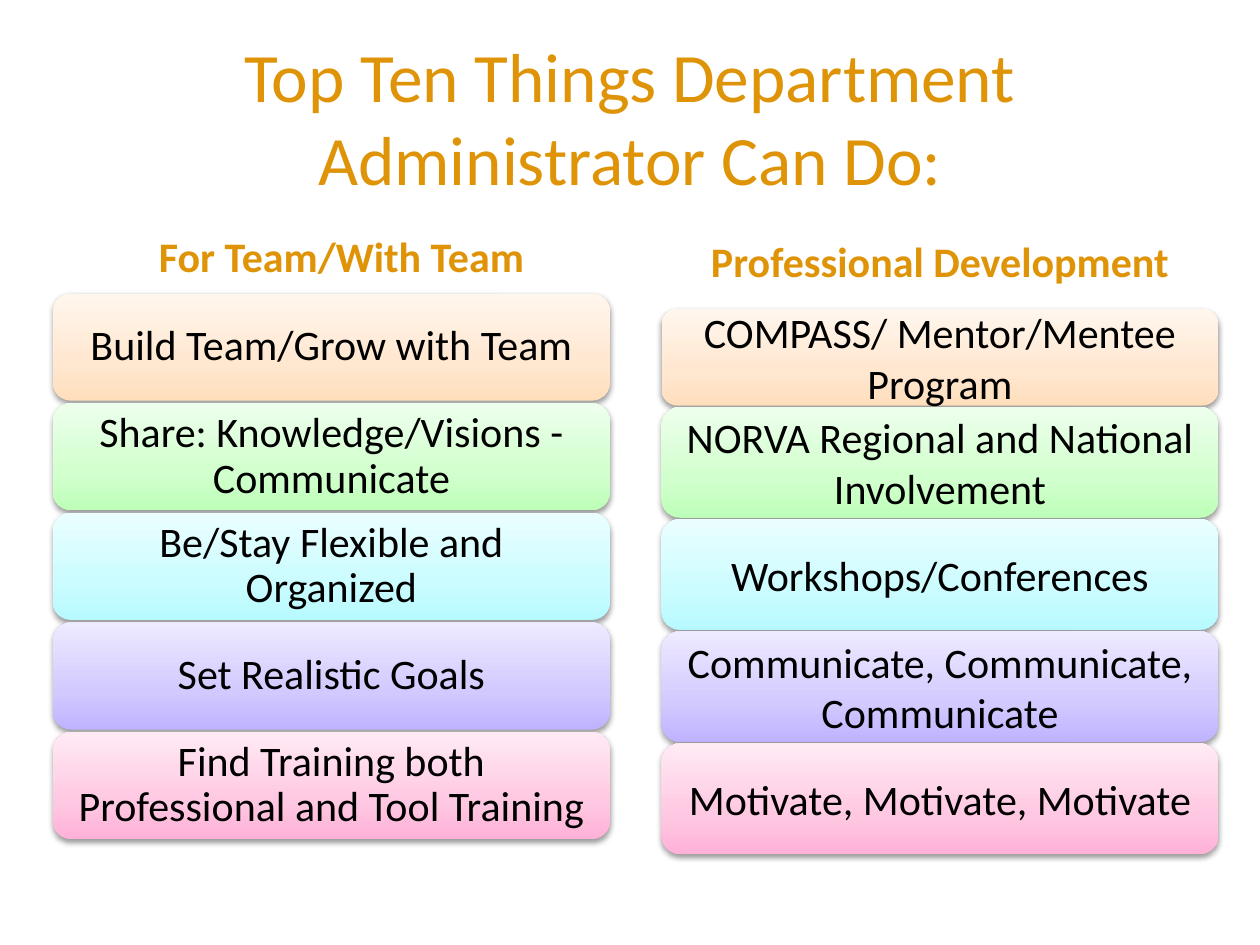
from lxml.etree import SubElement
from pptx import Presentation
from pptx.dml.color import RGBColor
from pptx.enum.shapes import MSO_SHAPE
from pptx.enum.text import MSO_ANCHOR, MSO_AUTO_SIZE, PP_ALIGN
from pptx.oxml.ns import qn
from pptx.util import Inches, Pt

GOLD = RGBColor(0xDF, 0x93, 0x07)
BLACK = RGBColor(0, 0, 0)
# Each bar fades from its bottom colour to its top colour.
SHADES = [
    [RGBColor.from_string(code) for code in trio]
    for trio in (
        ("FFDEBC", "FFE7D0", "FFF6ED"),
        ("BEFFB9", "D1FFCD", "EDFFEC"),
        ("B6FAFF", "CBFCFF", "EBFEFF"),
        ("C0B3FF", "D2C9FF", "EEEAFF"),
        ("FFB1D7", "FFC8E2", "FFEAF4"),
    )
]
STOPS = (0, 35, 100)
WIDTH = 4.42

TEAM = [
    "Build Team/Grow with Team",
    "Share: Knowledge/Visions - Communicate",
    "Be/Stay Flexible and Organized",
    "Set Realistic Goals",
    "Find Training both Professional and Tool Training",
]
GROWTH = [
    "COMPASS/ Mentor/Mentee Program",
    "NORVA Regional and National Involvement",
    "Workshops/Conferences",
    "Communicate, Communicate, Communicate",
    "Motivate, Motivate, Motivate",
]


def set_text(shape, text, size, color, bold=False, spacing=1.0):
    frame = shape.text_frame
    frame.text = text
    frame.word_wrap = True
    frame.auto_size = MSO_AUTO_SIZE.NONE
    frame.vertical_anchor = MSO_ANCHOR.MIDDLE
    para = frame.paragraphs[0]
    para.alignment = PP_ALIGN.CENTER
    para.line_spacing = spacing
    font = para.runs[0].font
    font.name, font.size, font.bold = "Calibri", Pt(size), bold
    font.color.rgb = color


def add_color(parent, color):
    return SubElement(parent, qn("a:srgbClr"), val=str(color))


def set_fade(shape, colors):
    """Fill with a three-stop gradient that runs upwards."""
    shape.fill.gradient()
    shape.fill.gradient_angle = 90
    stops = shape.fill._fill._gradFill.find(qn("a:gsLst"))
    for stop in list(stops):
        stops.remove(stop)
    for place, color in zip(STOPS, colors):
        add_color(SubElement(stops, qn("a:gs"), pos=str(place * 1000)), color)


def set_shadow(shape):
    """Cast a soft shadow straight down."""
    shape.shadow.inherit = False
    effects = shape._element.spPr.find(qn("a:effectLst"))
    shadow = SubElement(effects, qn("a:outerShdw"), blurRad="40000",
                        dist="20000", dir="5400000", rotWithShape="0")
    SubElement(add_color(shadow, BLACK), qn("a:alpha"), val="38000")


def add_bar(slide, left, top, height, text, colors, spacing):
    bar = slide.shapes.add_shape(
        MSO_SHAPE.ROUNDED_RECTANGLE,
        Inches(left), Inches(top), Inches(WIDTH), Inches(height))
    set_fade(bar, colors)
    bar.line.fill.background()
    set_shadow(bar)
    set_text(bar, text, 24, BLACK, spacing=spacing)
    frame = bar.text_frame
    frame.margin_left = frame.margin_right = Inches(0.1)
    frame.margin_top = frame.margin_bottom = Inches(0.1)


def add_stack(slide, left, top, heights, gap, texts, spacing):
    for text, height, colors in zip(texts, heights, SHADES):
        add_bar(slide, left, top, height, text, colors, spacing)
        top += height + gap


def add_heading(slide, left, top, text):
    box = slide.shapes.add_textbox(
        Inches(left), Inches(top), Inches(WIDTH), Inches(0.7))
    set_text(box, text, 24, GOLD, bold=True)


def add_title(slide, text):
    title = slide.shapes.title
    title.left, title.top = Inches(0.5), Inches(0.3)
    title.width, title.height = Inches(9), Inches(1.25)
    set_text(title, text, 39.6, GOLD)


def main():
    deck = Presentation()
    deck.slide_width, deck.slide_height = Inches(10), Inches(7.5)
    slide = deck.slides.add_slide(deck.slide_layouts[5])
    add_title(slide, "Top Ten Things Department Administrator Can Do:")
    add_heading(slide, 0.5, 1.68, "For Team/With Team")
    add_stack(slide, 0.42, 2.33, [0.85] * 5, 0.02, TEAM, 0.9)
    add_heading(slide, 5.25, 1.72, "Professional Development")
    add_stack(slide, 5.25, 2.45, [0.77] + [0.88] * 4, 0.01, GROWTH, 1.0)
    deck.save("out.pptx")


if __name__ == "__main__":
    main()
